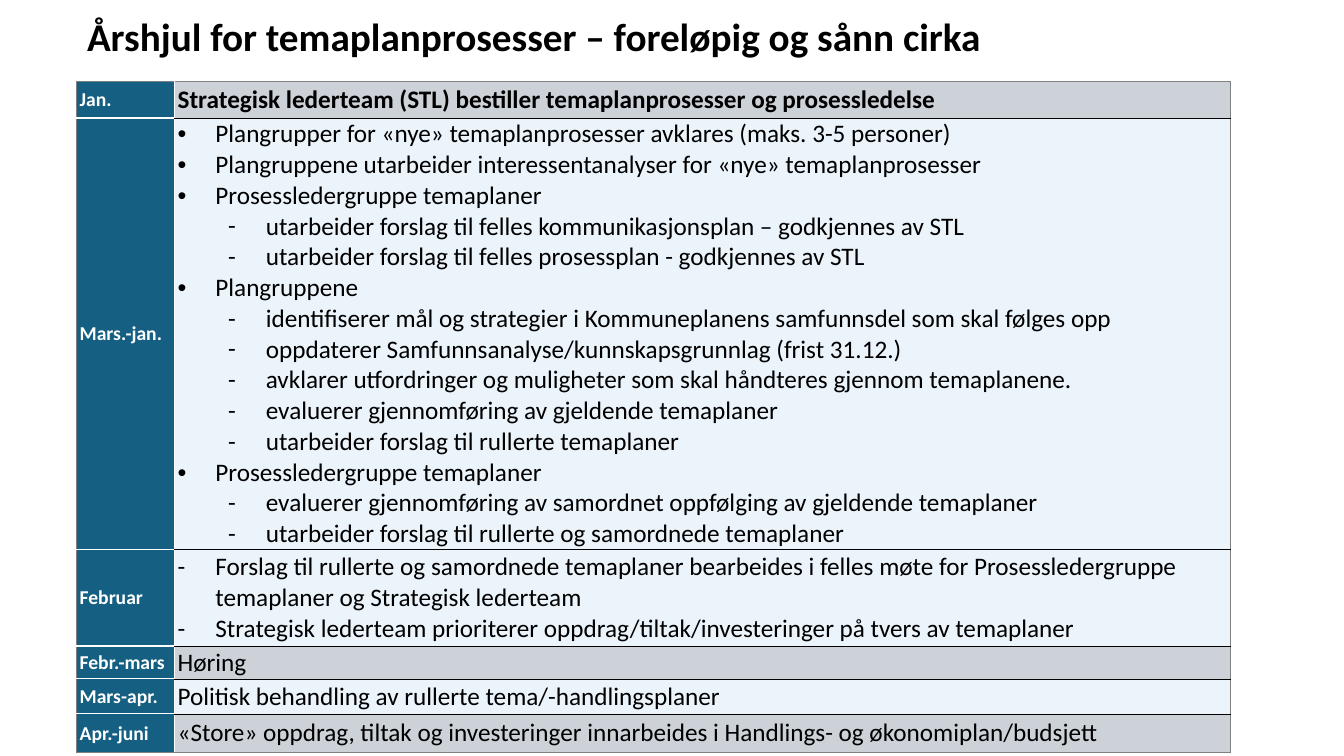
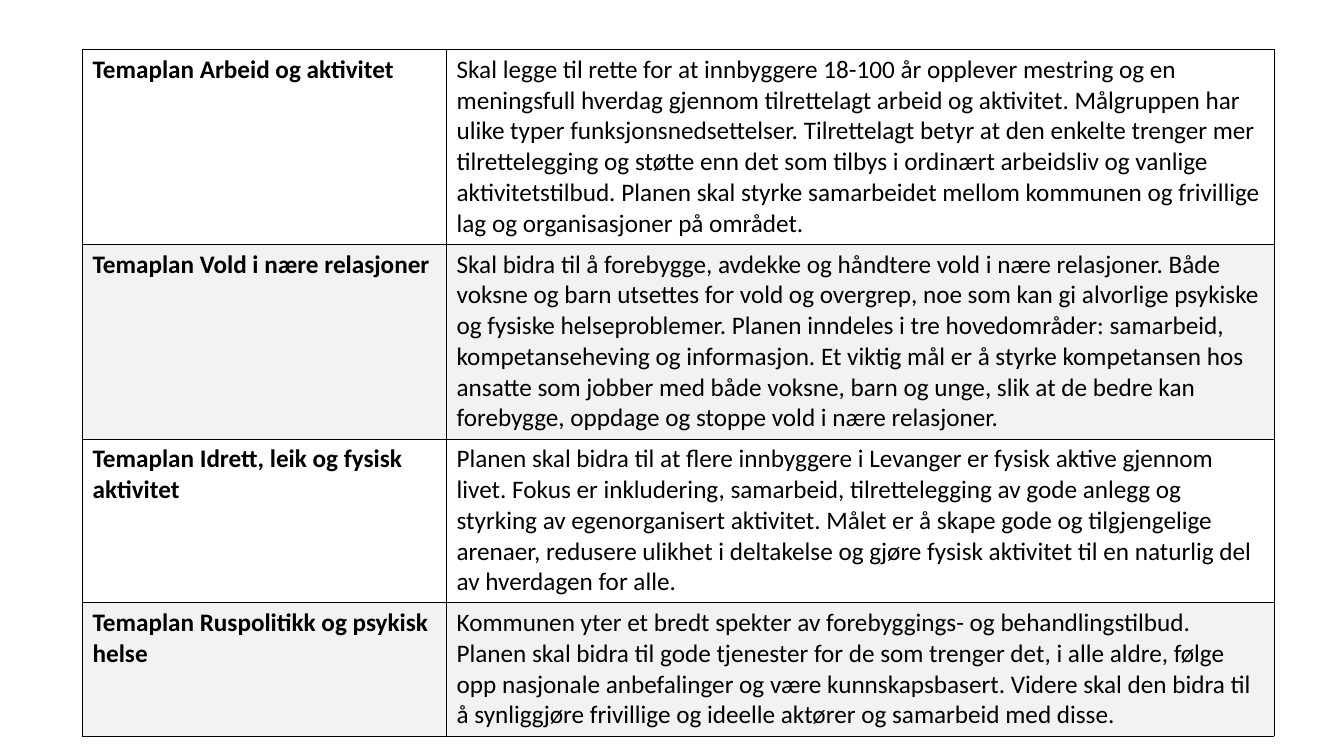
"""Builds two slides on the yearly cycle and contents of municipal theme plans."""
import pptx
import pptx.dml.color
import pptx.enum.text
import pptx.oxml.ns
import pptx.util
from lxml import etree

Pt = pptx.util.Pt
Anchor = pptx.enum.text.MSO_ANCHOR

FONT = "Calibri"
BLACK, WHITE, GREY = "000000", "FFFFFF", "808080"
TEAL, STEEL, ICE, MIST = "156082", "CCD2D8", "EBF3FB", "F2F2F2"
THIN, EDGE, GAP = (BLACK, 0.25), (GREY, 0.75), (WHITE, 1)

LABEL = {"size": Pt(14), "bold": True, "color": WHITE}
HEADING = {"size": Pt(18), "bold": True, "color": BLACK}
BODY = {"size": Pt(18), "bold": False, "color": BLACK}
TITLE = {"size": Pt(28), "bold": True, "color": BLACK}

PLAIN, BULLET, DASH, SUBDASH = (None, 0), ("•", 0), ("-", 0), ("-", 1)
HANGING, LEVEL_STEP = 27, 36

YEAR_ROWS = [
    (26, STEEL, HEADING, "Jan.", [
        (PLAIN, "Strategisk lederteam (STL) bestiller temaplanprosesser og prosessledelse")]),
    (307, ICE, BODY, "Mars.-jan.", [
        (BULLET, "Plangrupper for «nye» temaplanprosesser avklares (maks. 3-5 personer)"),
        (BULLET, "Plangruppene utarbeider interessentanalyser for «nye» temaplanprosesser"),
        (BULLET, "Prosessledergruppe temaplaner"),
        (SUBDASH, "utarbeider forslag til felles kommunikasjonsplan – godkjennes av STL"),
        (SUBDASH, "utarbeider forslag til felles prosessplan - godkjennes av STL"),
        (BULLET, "Plangruppene"),
        (SUBDASH, "identifiserer mål og strategier i Kommuneplanens samfunnsdel som skal følges opp"),
        (SUBDASH, "oppdaterer Samfunnsanalyse/kunnskapsgrunnlag (frist 31.12.)"),
        (SUBDASH, "avklarer utfordringer og muligheter som skal håndteres gjennom temaplanene."),
        (SUBDASH, "evaluerer gjennomføring av gjeldende temaplaner"),
        (SUBDASH, "utarbeider forslag til rullerte temaplaner"),
        (BULLET, "Prosessledergruppe temaplaner"),
        (SUBDASH, "evaluerer gjennomføring av samordnet oppfølging av gjeldende temaplaner"),
        (SUBDASH, "utarbeider forslag til rullerte og samordnede temaplaner")]),
    (69, ICE, BODY, "Februar", [
        (DASH, "Forslag til rullerte og samordnede temaplaner bearbeides i felles møte for "
               "Prosessledergruppe temaplaner og Strategisk lederteam"),
        (DASH, "Strategisk lederteam prioriterer oppdrag/tiltak/investeringer på tvers av "
               "temaplaner")]),
    (23.5, STEEL, BODY, "Febr.-mars", [(PLAIN, "Høring")]),
    (25, ICE, BODY, "Mars-apr.", [
        (PLAIN, "Politisk behandling av rullerte tema/-handlingsplaner")]),
    (27.5, STEEL, BODY, "Apr.-juni", [
        (PLAIN, "«Store» oppdrag, tiltak og investeringer innarbeides i Handlings- og "
                "økonomiplan/budsjett")]),
]

PLAN_ROWS = [
    (139, "Temaplan Arbeid og aktivitet",
     "Skal legge til rette for at innbyggere 18-100 år opplever mestring og en meningsfull "
     "hverdag gjennom tilrettelagt arbeid og aktivitet. Målgruppen har ulike typer "
     "funksjonsnedsettelser. Tilrettelagt betyr at den enkelte trenger mer tilrettelegging og "
     "støtte enn det som tilbys i ordinært arbeidsliv og vanlige aktivitetstilbud. Planen skal "
     "styrke samarbeidet mellom kommunen og frivillige lag og organisasjoner på området."),
    (139, "Temaplan Vold i nære relasjoner",
     "Skal bidra til å forebygge, avdekke og håndtere vold i nære relasjoner. Både voksne og "
     "barn utsettes for vold og overgrep, noe som kan gi alvorlige psykiske og fysiske "
     "helseproblemer. Planen inndeles i tre hovedområder: samarbeid, kompetanseheving og "
     "informasjon. Et viktig mål er å styrke kompetansen hos ansatte som jobber med både "
     "voksne, barn og unge, slik at de bedre kan forebygge, oppdage og stoppe vold i nære "
     "relasjoner."),
    (117, "Temaplan Idrett, leik og fysisk aktivitet",
     "Planen skal bidra til at flere innbyggere i Levanger er fysisk aktive gjennom livet. "
     "Fokus er inkludering, samarbeid, tilrettelegging av gode anlegg og styrking av "
     "egenorganisert aktivitet. Målet er å skape gode og tilgjengelige arenaer, redusere "
     "ulikhet i deltakelse og gjøre fysisk aktivitet til en naturlig del av hverdagen for "
     "alle."),
    (95, "Temaplan Ruspolitikk og psykisk helse",
     "Kommunen yter et bredt spekter av forebyggings- og behandlingstilbud. Planen skal bidra "
     "til gode tjenester for de som trenger det, i alle aldre, følge opp nasjonale anbefalinger "
     "og være kunnskapsbasert. Videre skal den bidra til å synliggjøre frivillige og ideelle "
     "aktører og samarbeid med disse."),
]


def colour(value):
    """Return the colour for a hex string."""
    return pptx.dml.color.RGBColor.from_string(value)


def add_element(parent, tag, **attributes):
    """Append a drawing element with the given attributes."""
    element = etree.SubElement(parent, pptx.oxml.ns.qn(tag))
    for name, value in attributes.items():
        element.set(name, str(value))
    return element


class Deck:
    """Holds the style and the current slide."""

    def __init__(self):
        """Start a widescreen presentation."""
        self.presentation = pptx.Presentation()
        self.presentation.slide_width = Pt(960)
        self.presentation.slide_height = Pt(540)
        self.slide = None

    def add_slide(self, title=None):
        """Add a slide, with a title if one is given."""
        layout = self.presentation.slide_layouts[5 if title else 6]
        self.slide = self.presentation.slides.add_slide(layout)
        if title:
            shape = self.slide.shapes.title
            box = {"left": 55, "top": 8.5, "width": 805, "height": 39}
            for name, value in box.items():
                setattr(shape, name, Pt(value))
            shape.text_frame.auto_size = pptx.enum.text.MSO_AUTO_SIZE.NONE
            shape.text_frame.vertical_anchor = Anchor.MIDDLE
            paragraph = shape.text_frame.paragraphs[0]
            paragraph.alignment = pptx.enum.text.PP_ALIGN.LEFT
            paragraph.line_spacing = 0.9
            self.add_text(paragraph, title, TITLE)

    def add_text(self, paragraph, text, style):
        """Add a run in the given style."""
        run = paragraph.add_run()
        run.text = text
        for name, value in {"name": FONT, **style}.items():
            if name == "color":
                run.font.color.rgb = colour(value)
            else:
                setattr(run.font, name, value)

    def mark(self, paragraph, marker, level):
        """Give a paragraph a hanging list marker."""
        paragraph.level = level
        properties = paragraph._p.get_or_add_pPr()
        properties.set("marL", str(Pt(HANGING + level * LEVEL_STEP)))
        properties.set("indent", str(-Pt(HANGING)))
        add_element(properties, "a:buFont", typeface="Arial" if marker == "•" else FONT)
        add_element(properties, "a:buChar", char=marker)

    def fill_cell(self, cell, fill, style, entries, cell_format, borders):
        """Set the borders, fill, layout and paragraphs of a cell."""
        properties = cell._tc.get_or_add_tcPr()
        for side, (line_colour, width) in zip("LRTB", borders):
            line = add_element(properties, f"a:ln{side}", w=Pt(width))
            solid = add_element(line, "a:solidFill")
            add_element(solid, "a:srgbClr", val=line_colour)
        cell.fill.solid()
        cell.fill.fore_color.rgb = colour(fill)
        for name, value in cell_format.items():
            setattr(cell, name, value)
        for index, ((marker, level), text) in enumerate(entries):
            frame = cell.text_frame
            paragraph = frame.add_paragraph() if index else frame.paragraphs[0]
            if marker:
                self.mark(paragraph, marker, level)
            self.add_text(paragraph, text, style)

    def add_table(self, left, top, widths, rows, cell_format, outer, column_line, row_lines):
        """Add a table from rows of a height and (fill, style, entries) cells."""
        heights = [height for height, cells in rows]
        table = self.slide.shapes.add_table(
            len(rows), len(widths), Pt(left), Pt(top), Pt(sum(widths)), Pt(sum(heights))).table
        table.first_row = table.horz_banding = False
        for column, width in zip(table.columns, widths):
            column.width = Pt(width)
        for row_index, (height, cells) in enumerate(rows):
            table.rows[row_index].height = Pt(height)
            for column_index, content in enumerate(cells):
                row_line = row_lines[column_index]
                borders = (
                    column_line if column_index else outer,
                    outer if column_index == len(widths) - 1 else column_line,
                    row_line if row_index else outer,
                    outer if row_index == len(rows) - 1 else row_line)
                self.fill_cell(table.cell(row_index, column_index), *content,
                               cell_format, borders)


def main():
    """Build and save the slides."""
    deck = Deck()
    deck.add_slide("Årshjul for temaplanprosesser – foreløpig og sånn cirka")
    year_rows = [(height, [(TEAL, LABEL, [(PLAIN, label)]), (fill, style, entries)])
                 for height, fill, style, label, entries in YEAR_ROWS]
    tight = {"margin_left": Pt(2.2), "margin_right": Pt(2.2), "margin_top": Pt(0.5),
             "margin_bottom": Pt(0), "vertical_anchor": Anchor.MIDDLE}
    deck.add_table(54.7, 58.3, [70, 754], year_rows, tight, EDGE, GAP, [GAP, THIN])

    deck.add_slide()
    plan_rows = []
    for index, (height, name, description) in enumerate(PLAN_ROWS):
        fill = MIST if index % 2 else WHITE
        plan_rows.append((height, [(fill, HEADING, [(PLAIN, name)]),
                                   (fill, BODY, [(PLAIN, description)])]))
    deck.add_table(59, 35.3, [260, 591], plan_rows, {"vertical_anchor": Anchor.TOP},
                   THIN, THIN, [THIN, THIN])
    deck.presentation.save("out.pptx")


if __name__ == "__main__":
    main()
